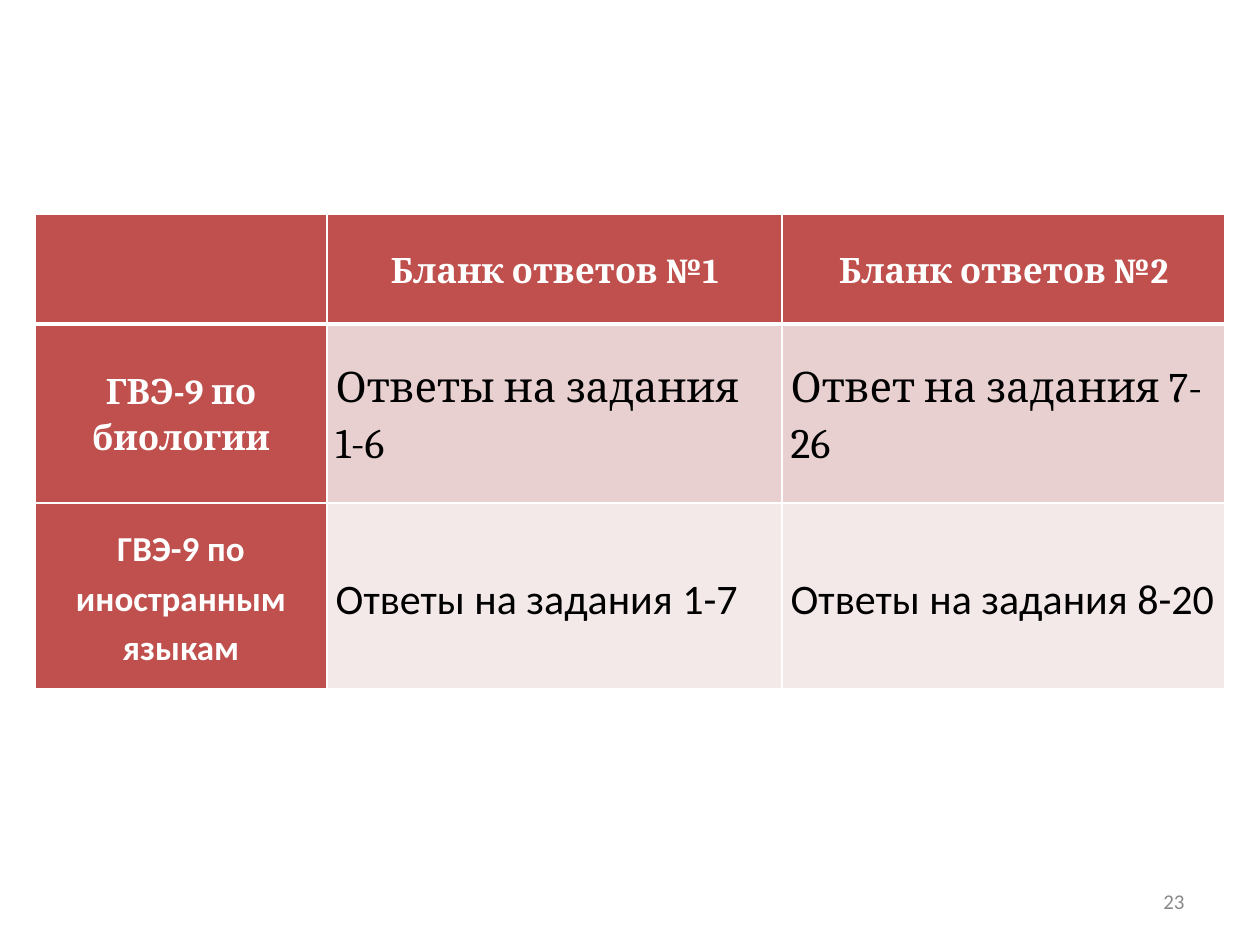
from lxml import etree
from pptx import Presentation
from pptx import util as u
from pptx.dml.color import RGBColor
from pptx.enum import text
from pptx.oxml import ns

PX = 914400 / 126
COLORS = {"accent": "C0504D", "band": "E8D0D0", "light": "F4E9E9",
          "white": "FFFFFF", "black": "000000", "grey": "898989"}
ANSWERS = [
    ["", "Бланк ответов №1", "Бланк ответов №2"],
    ["ГВЭ-9 по биологии", "Ответы на задания 1-6", "Ответ на задания 7-26"],
    ["ГВЭ-9 по иностранным языкам", "Ответы на задания 1-7", "Ответы на задания 8-20"],
]
COLUMNS = [292, 455, 443]
ROWS = [110, 179, 186]
HEADING = {"size": u.Pt(20), "bold": True}
ANSWER = {"size": u.Pt(24), "bold": False}
SPACING = {"line_spacing": 1.15, "space_after": u.Pt(10)}
CELL = {"vertical_anchor": text.MSO_ANCHOR.MIDDLE, "margin_left": u.Pt(5),
        "margin_right": u.Pt(5), "margin_top": 0, "margin_bottom": 0}


def px(length):
    """Turn px into EMU."""
    return u.Emu(round(length * PX))


def rgb(name):
    """Look up a named colour."""
    return RGBColor.from_string(COLORS[name])


def apply(target, values):
    """Set attributes from a dict of format values."""
    for name, value in values.items():
        setattr(target, name, value)


def draw_borders(cell, widths):
    """Draw white cell borders with the given widths in points."""
    properties = cell._tc.get_or_add_tcPr()
    for side, width in widths.items():
        line = etree.SubElement(properties, ns.qn(f"a:ln{side}"), w=str(u.Pt(width)))
        fill = etree.SubElement(line, ns.qn("a:solidFill"))
        etree.SubElement(fill, ns.qn("a:srgbClr"), val=COLORS["white"])


def format_cell(cell, wording, row, column):
    """Fill one cell as a heading or as an answer."""
    heading = row == 0 or column == 0
    apply(cell, CELL)
    draw_borders(cell, {"L": 1, "R": 1, "T": 3 if row == 1 else 1, "B": 3 if row == 0 else 1})
    cell.fill.solid()
    cell.fill.fore_color.rgb = rgb("accent" if heading else ("band" if row == 1 else "light"))
    if not wording:
        return
    cell.text = wording
    paragraph = cell.text_frame.paragraphs[0]
    apply(paragraph, SPACING)
    paragraph.alignment = text.PP_ALIGN.CENTER if heading else text.PP_ALIGN.LEFT
    font = paragraph.runs[0].font
    apply(font, HEADING if heading else ANSWER)
    font.name = "Calibri" if row == 2 else "Cambria"
    font.color.rgb = rgb("white" if heading else "black")


def add_answer_table(slide, left, top):
    """Place the table of answer sheets by exam."""
    table = slide.shapes.add_table(len(ROWS), len(COLUMNS), px(left), px(top),
                                   px(sum(COLUMNS)), px(sum(ROWS))).table
    for column, width in zip(table.columns, COLUMNS):
        column.width = px(width)
    for row, height in zip(table.rows, ROWS):
        row.height = px(height)
    for row, wordings in enumerate(ANSWERS):
        for column, wording in enumerate(wordings):
            format_cell(table.cell(row, column), wording, row, column)


def add_page_number(slide, left, top, width, height):
    """Place the page number at the right of its box."""
    frame = slide.shapes.add_textbox(*map(px, (left, top, width, height))).text_frame
    apply(frame, {"word_wrap": True, "vertical_anchor": text.MSO_ANCHOR.MIDDLE, "text": "23"})
    paragraph = frame.paragraphs[0]
    paragraph.alignment = text.PP_ALIGN.RIGHT
    font = paragraph.runs[0].font
    apply(font, {"size": u.Pt(12), "name": "Calibri"})
    font.color.rgb = rgb("grey")


def main():
    """Build and save the slide."""
    deck = Presentation()
    apply(deck, {"slide_width": px(1260), "slide_height": px(945)})
    slide = deck.slides.add_slide(deck.slide_layouts[6])
    add_answer_table(slide, 35, 214)
    add_page_number(slide, 903, 876, 294, 50)
    deck.save("out.pptx")


if __name__ == "__main__":
    main()
